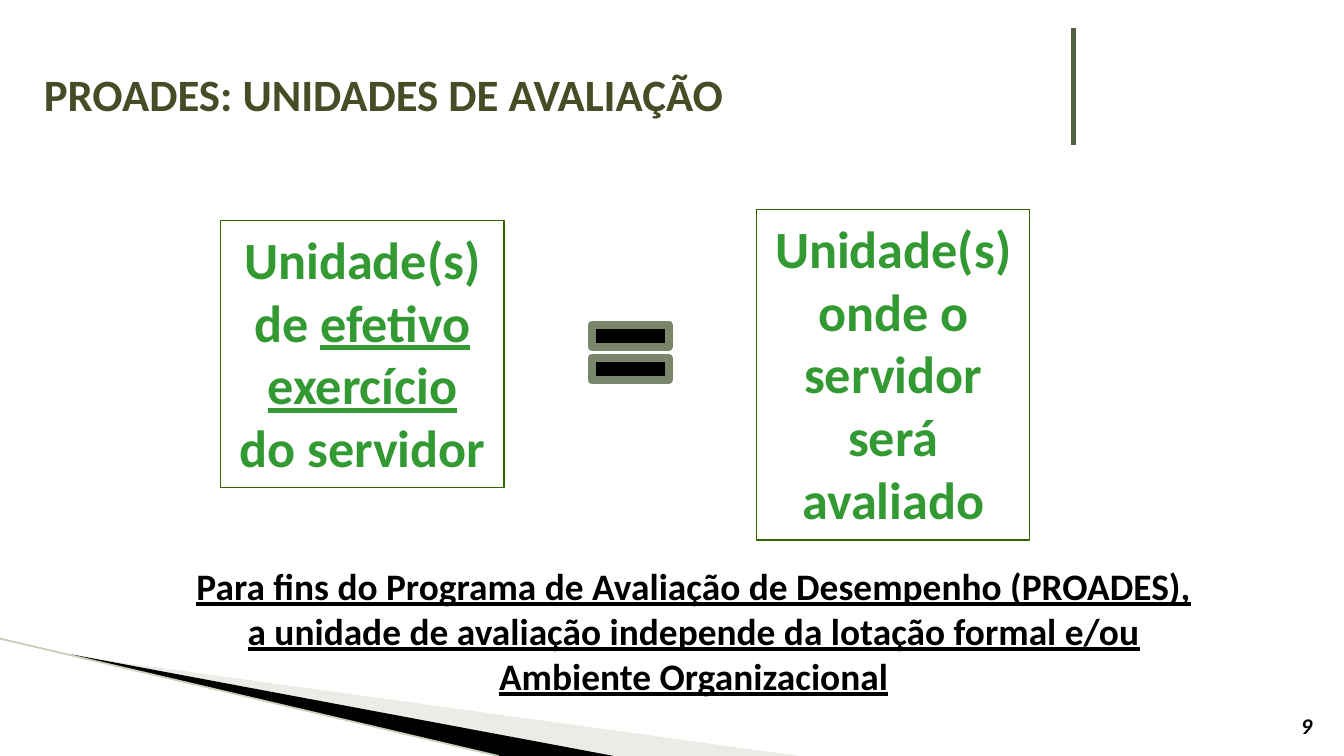
from lxml import etree
from pptx import Presentation
from pptx.dml.color import RGBColor
from pptx.enum.shapes import MSO_CONNECTOR, MSO_SHAPE
from pptx.enum.text import MSO_ANCHOR, PP_ALIGN
from pptx.oxml.ns import qn
from pptx.util import Cm, Pt

LEFT, CENTER, RIGHT = PP_ALIGN.LEFT, PP_ALIGN.CENTER, PP_ALIGN.RIGHT
TOP, MIDDLE, BOTTOM = MSO_ANCHOR.TOP, MSO_ANCHOR.MIDDLE, MSO_ANCHOR.BOTTOM
RECTANGLE, EQUAL = MSO_SHAPE.RECTANGLE, MSO_SHAPE.MATH_EQUAL
STRAIGHT = MSO_CONNECTOR.STRAIGHT

# Content: runs are (text, extra font values)
UNDERLINED = {"underline": True}
TITLE = [("PROADES: UNIDADES DE AVALIAÇÃO", {})]
WORK_UNIT = [("Unidade(s) de ", {}), ("efetivo exercício ", UNDERLINED), ("do servidor", {})]
REVIEW_UNIT = [("Unidade(s) onde o servidor será avaliado", {})]
NOTE = [("Para fins do Programa de Avaliação de Desempenho (PROADES), a unidade de "
         "avaliação independe da lotação formal e/ou Ambiente Organizacional", UNDERLINED)]
PAGE_NUMBER = [("9", {"italic": True})]

THEME = {
    "font": "Calibri",
    "colors": {"title": "444D26", "unit": "339933", "border": "336600", "text": "000000",
               "dark": "000000", "pale": "CBD4C0", "edge": "C6D0BB", "bar": "536142",
               "equal_line": "7A866C"},
    "sizes": {"title": 24, "unit": 28, "note": 20, "number": 12},
}

# Layout in centimetres: (left, top, width, height) or points
WIDTH, HEIGHT = 25.4, 14.29
WEDGES = [
    ([(1.4, 12.4), (15.11, HEIGHT), (11.58, HEIGHT)], "pale", 40),
    ([(1.35, 12.37), (11.6, HEIGHT), (9.45, HEIGHT), (1.37, 12.4)], "dark", 100),
]
LINES = [
    ((0, 12.07), (9.42, HEIGHT), "edge", 0.95),
    ((20.29, 0.53), (20.29, 2.74), "bar", 2.75),
]
TEXTS = [  # runs, place, size, color, alignment, anchor
    (PAGE_NUMBER, (23.7, 13.34, 1.35, 0.76), "number", "text", RIGHT, BOTTOM),
    (TITLE, (0.58, 0.58, 19.63, 2.39), "title", "title", LEFT, MIDDLE),
    (NOTE, (3.38, 10.52, 19.46, 2.82), "note", "text", CENTER, TOP),
]
UNITS = [
    (WORK_UNIT, (4.17, 4.17, 5.36, 5.05)),
    (REVIEW_UNIT, (14.3, 3.96, 5.16, 6.25)),
]
EQUAL_PLACE = (10.92, 5.77, 1.98, 1.78)


def color(name):
    return RGBColor.from_string(THEME["colors"][name])


def lengths(values):
    return [Cm(value) for value in values]


def set_values(target, values):
    for name, value in values.items():
        setattr(target, name, value)


def set_line(line, name, width):
    line.color.rgb = color(name)
    line.width = Pt(width)


def set_fill(shape, name, opacity=100):
    shape.fill.solid()
    shape.fill.fore_color.rgb = color(name)
    if opacity < 100:
        tone = shape.fill._xPr.find(qn("a:solidFill"))[0]
        etree.SubElement(tone, qn("a:alpha"), val=str(opacity * 1000))


def write(shape, runs, size, color_name, alignment, anchor):
    set_values(shape.text_frame, {"word_wrap": True, "vertical_anchor": anchor})
    paragraph = shape.text_frame.paragraphs[0]
    paragraph.alignment = alignment
    for text, extra in runs:
        run = paragraph.add_run()
        run.text = text
        set_values(run.font, {"name": THEME["font"], "size": Pt(THEME["sizes"][size]),
                              "bold": True, **extra})
        run.font.color.rgb = color(color_name)


def add_wedge(slide, points, color_name, opacity):
    corners = [lengths(point) for point in points]
    builder = slide.shapes.build_freeform(*corners[0])
    builder.add_line_segments(corners[1:], close=True)
    shape = builder.convert_to_shape()
    shape.shadow.inherit = False
    set_fill(shape, color_name, opacity)
    shape.line.fill.background()


def add_line(slide, start, end, color_name, width):
    connector = slide.shapes.add_connector(STRAIGHT, *lengths(start + end))
    set_line(connector.line, color_name, width)
    etree.SubElement(connector._element.spPr, qn("a:effectLst"))


def add_shape(slide, kind, place, line_color, line_width):
    shape = slide.shapes.add_shape(kind, *lengths(place))
    shape.shadow.inherit = False
    set_line(shape.line, line_color, line_width)
    return shape


def main():
    presentation = Presentation()
    set_values(presentation, {"slide_width": Cm(WIDTH), "slide_height": Cm(HEIGHT)})
    slide = presentation.slides.add_slide(presentation.slide_layouts[6])

    # Corner decoration and title bar
    for wedge in WEDGES:
        add_wedge(slide, *wedge)
    for line in LINES:
        add_line(slide, *line)

    # Page number, title and note
    for runs, place, *style in TEXTS:
        write(slide.shapes.add_textbox(*lengths(place)), runs, *style)

    # The two units and the equal sign between them
    for runs, place in UNITS:
        shape = add_shape(slide, RECTANGLE, place, "border", 0.75)
        shape.fill.background()
        write(shape, runs, "unit", "unit", CENTER, TOP)
    set_fill(add_shape(slide, EQUAL, EQUAL_PLACE, "equal_line", 4.33), "dark")

    presentation.save("out.pptx")


if __name__ == "__main__":
    main()
